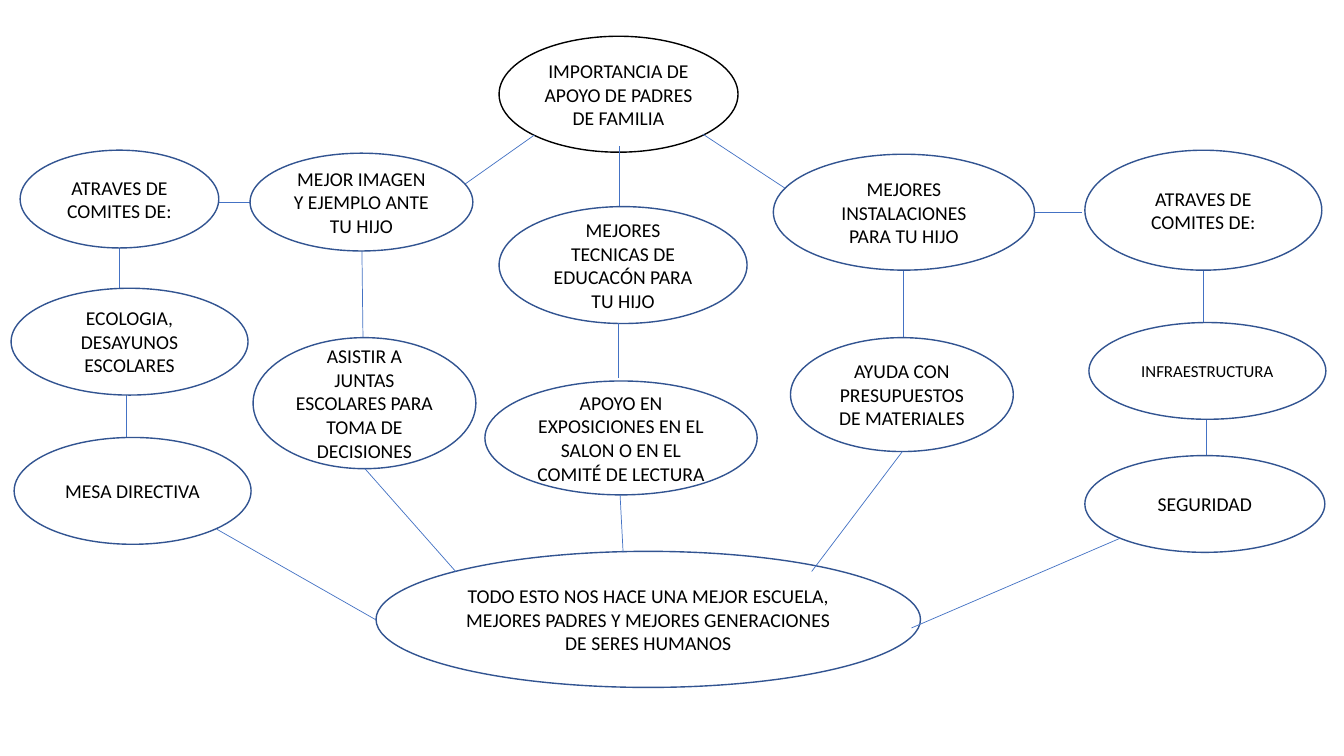
from lxml import etree
from pptx import Presentation
from pptx.dml.color import RGBColor
from pptx.enum.shapes import MSO_CONNECTOR, MSO_SHAPE
from pptx.enum.text import MSO_ANCHOR, PP_ALIGN
from pptx.oxml.ns import qn
from pptx.util import Inches, Pt

OVAL = MSO_SHAPE.OVAL
STRAIGHT = MSO_CONNECTOR.STRAIGHT
CENTER = PP_ALIGN.CENTER
MIDDLE = MSO_ANCHOR.MIDDLE
BLACK = RGBColor(0x00, 0x00, 0x00)
WHITE = RGBColor(0xFF, 0xFF, 0xFF)
NAVY = RGBColor(0x32, 0x54, 0x91)
BLUE = RGBColor(0x44, 0x72, 0xC4)

TOPIC = ("IMPORTANCIA DE APOYO DE PADRES DE FAMILIA", 4.95, 0.36, 2.37, 1.15)
IDEAS = [
    ("ATRAVES DE COMITES DE:", 0.2, 1.49, 1.97, 0.97),
    ("ECOLOGIA,\nDESAYUNOS ESCOLARES", 0.11, 2.86, 2.35, 1.06),
    ("MESA DIRECTIVA", 0.14, 4.34, 2.35, 1.06),
    ("MEJOR IMAGEN Y EJEMPLO ANTE TU HIJO", 2.48, 1.52, 2.21, 0.97),
    ("ASISTIR A JUNTAS ESCOLARES PARA TOMA DE DECISIONES", 2.51, 3.35, 2.21, 1.3),
    ("MEJORES TECNICAS DE EDUCACÓN PARA TU HIJO", 4.95, 2.05, 2.46, 1.16),
    ("APOYO EN EXPOSICIONES EN EL SALON O EN EL COMITÉ DE LECTURA",
     4.81, 3.78, 2.7, 1.13),
    ("MEJORES INSTALACIONES PARA TU HIJO", 7.67, 1.53, 2.59, 1.15),
    ("AYUDA CON PRESUPUESTOS DE MATERIALES", 7.84, 3.35, 2.21, 1.13),
    ("ATRAVES DE COMITES DE:", 10.76, 1.49, 2.35, 1.19),
    ("SEGURIDAD", 10.76, 4.52, 2.38, 0.96),
    ("TODO ESTO NOS HACE UNA MEJOR ESCUELA, MEJORES PADRES "
     "Y MEJORES GENERACIONES DE SERES HUMANOS", 3.73, 5.47, 5.4, 1.35),
]
INFRASTRUCTURE = ("INFRAESTRUCTURA", 10.8, 3.2, 2.35, 0.96)

BRANCH_LINKS = [
    (6.14, 1.45, 6.14, 2.08),
    (5.3, 1.34, 4.48, 1.92),
    (6.97, 1.33, 7.79, 1.87),
    (1.98, 2.01, 2.48, 2.01),
    (10.25, 2.11, 10.73, 2.11),
    (1.18, 2.46, 1.18, 2.95),
    (1.25, 3.92, 1.25, 4.4),
    (3.59, 2.49, 3.6, 3.35),
    (8.96, 2.68, 8.96, 3.48),
    (11.94, 2.68, 11.94, 3.22),
    (11.97, 4.16, 11.97, 4.67),
]
CLOSING_LINKS = [
    (6.13, 3.2, 6.13, 3.75),
    (2.15, 5.25, 3.73, 6.15),
    (3.62, 4.65, 4.52, 5.67),
    (6.15, 4.91, 6.18, 5.48),
    (8.95, 4.48, 8.05, 5.67),
    (11.11, 5.34, 9.04, 6.23),
]


class ConceptMap:
    font = "Calibri"

    def __init__(self, slide):
        self.slide = slide

    def bubble(self, text, left, top, width, height, outline=NAVY, size=14):
        oval = self.slide.shapes.add_shape(
            OVAL, Inches(left), Inches(top), Inches(width), Inches(height))
        oval.shadow.inherit = False
        oval.fill.solid()
        oval.fill.fore_color.rgb = WHITE
        oval.line.color.rgb = outline
        oval.line.width = Pt(1)
        frame = oval.text_frame
        frame.text = text
        frame.word_wrap = True
        frame.vertical_anchor = MIDDLE
        for paragraph in frame.paragraphs:
            paragraph.alignment = CENTER
            for run in paragraph.runs:
                run.font.name = self.font
                run.font.size = Pt(size)
                run.font.color.rgb = BLACK

    def link(self, x1, y1, x2, y2):
        connector = self.slide.shapes.add_connector(
            STRAIGHT, Inches(x1), Inches(y1), Inches(x2), Inches(y2))
        connector.line.color.rgb = BLUE
        connector.line.width = Pt(0.5)
        etree.SubElement(connector._element.spPr, qn("a:effectLst"))


def main():
    deck = Presentation()
    deck.slide_width = Inches(13.33)
    deck.slide_height = Inches(7.5)
    concept_map = ConceptMap(deck.slides.add_slide(deck.slide_layouts[6]))
    concept_map.bubble(*TOPIC, outline=BLACK)
    for ends in BRANCH_LINKS:
        concept_map.link(*ends)
    for idea in IDEAS:
        concept_map.bubble(*idea)
    concept_map.bubble(*INFRASTRUCTURE, size=12)
    for ends in CLOSING_LINKS:
        concept_map.link(*ends)
    deck.save("out.pptx")


if __name__ == "__main__":
    main()
